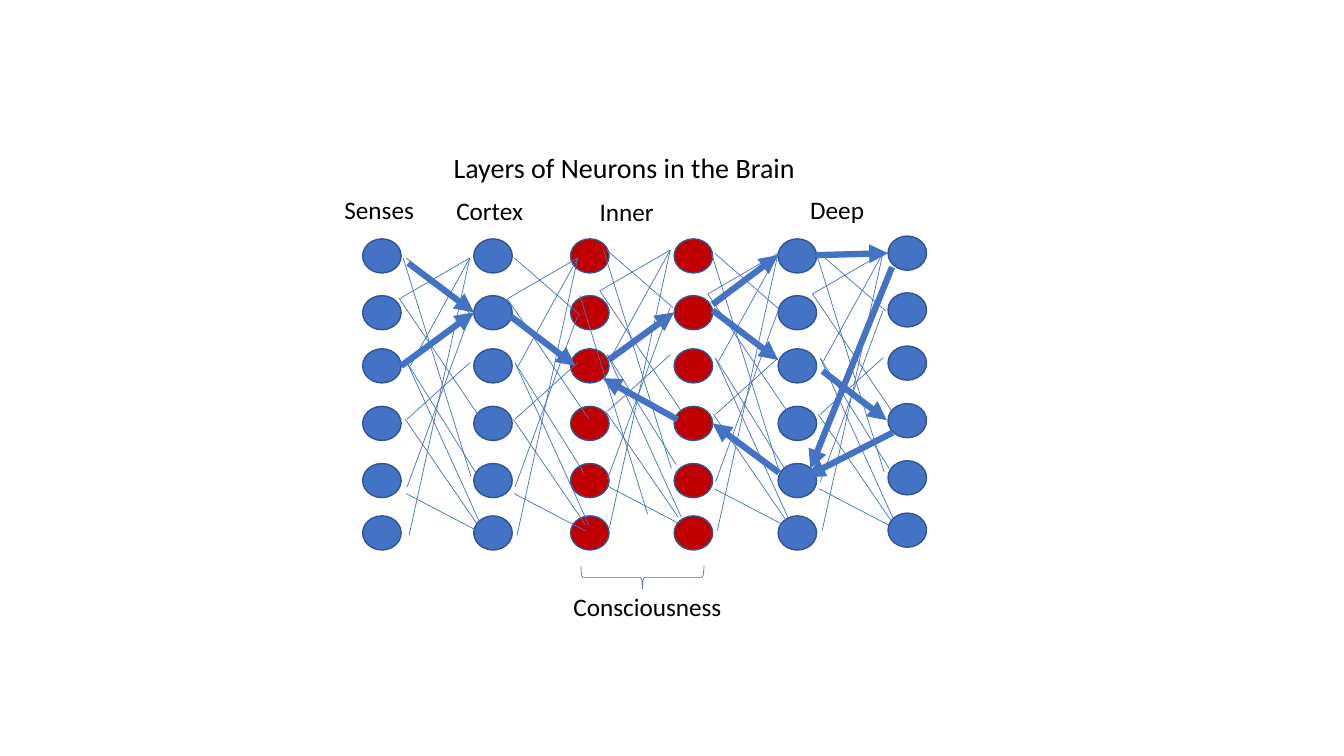
import dataclasses

import lxml.etree
import pptx
import pptx.dml.color
import pptx.enum.shapes
import pptx.enum.text
import pptx.oxml.ns
import pptx.util

Cm = pptx.util.Cm
Pt = pptx.util.Pt


@dataclasses.dataclass(frozen=True)
class Theme:
    font: str = "Calibri"
    blue: str = "4472C4"
    red: str = "C00000"
    outline: str = "325491"
    ink: str = "000000"
    title_size: float = 20
    label_size: float = 18
    thin: float = 0.5
    edge: float = 1
    thick: float = 4.5


THEME = Theme()

LABELS = [
    ("Senses", 8.43, 4.78, 2.41, THEME.label_size),
    ("Cortex", 11.25, 4.8, 2.41, THEME.label_size),
    ("Deep", 20.17, 4.78, 2.87, THEME.label_size),
    ("Inner", 14.86, 4.83, 3, THEME.label_size),
    ("Layers of Neurons in the Brain", 11.18, 3.68, 11, THEME.title_size),
    ("Consciousness", 14.2, 14.78, 5.33, THEME.label_size),
]

NEURON_WIDTH, NEURON_HEIGHT = 0.97, 0.86
ROWS = [6.02, 7.45, 8.79, 10.24, 11.68, 13]
LAYERS = [
    (9.14, 0, THEME.blue),
    (11.94, 0, THEME.blue),
    (14.38, 0, THEME.red),
    (16.99, 0, THEME.red),
    (19.61, 0, THEME.blue),
    (22.38, -0.07, THEME.blue),
]

FIRST_SYNAPSE = (0, 0, 1.71, 5.51)
SYNAPSES = [
    (-0.1, 1.02, 1.96, 4.06),
    (0.1, 2.64, 1.96, 6.73),
    (0.05, 4.06, 1.88, 6.73),
    (1.68, 1.45, 0.1, 5.77),
    (1.68, 0, 0.15, 6.99),
    (1.68, 2.64, 0.1, 4.06),
    (1.68, 0, -0.08, 1.02),
    (1.83, 5.41, 0.1, 2.64),
    (1.88, 6.88, 0.08, 5.94),
    (1.75, 1.45, 0.08, 0),
    (1.68, 0, 0.18, 2.72),
]
BACK_WEB = (20.57, 6.38, 0, 0)
FRONT_WEBS = [
    (10.16, 6.5, 0, 0),
    (12.88, 6.5, 1.73, 0.94),
    (15.21, 6.3, 0, 0),
    (17.93, 6.38, 0, 0),
]

SIGNALS = [
    (10.29, 6.63, 11.94, 7.87),
    (10.11, 9.22, 11.94, 7.87),
    (12.88, 7.98, 14.5, 9.22),
    (15.34, 9.07, 16.99, 7.87),
    (17.96, 7.82, 19.61, 9.07),
    (17.96, 7.67, 19.61, 6.43),
    (20.73, 9.35, 22.35, 10.59),
    (22.5, 10.9, 20.32, 12.01),
    (19.63, 11.91, 17.96, 10.67),
    (20.57, 6.43, 22.38, 6.38),
    (22.48, 6.73, 20.42, 11.81),
    (17.07, 10.57, 15.19, 9.53),
]

BRACE = (15.9, 13, 0.58, 3.1)


def color(value):
    return pptx.dml.color.RGBColor.from_string(value)


def apply(target, values):
    for name, value in values.items():
        setattr(target, name, value)


def stroke(item, value, width):
    item.line.color.rgb = color(value)
    item.line.width = Pt(width)


def add_line(page, ends, width, arrow=False):
    connector = page.shapes.add_connector(
        pptx.enum.shapes.MSO_CONNECTOR.STRAIGHT, *map(Cm, ends))
    stroke(connector, THEME.blue, width)
    if arrow:
        lxml.etree.SubElement(
            connector.line._get_or_add_ln(),
            pptx.oxml.ns.qn("a:tailEnd"), type="triangle")
    lxml.etree.SubElement(
        connector._element.spPr, pptx.oxml.ns.qn("a:effectLst"))


def add_web(page, web):
    left, top, shift_x, shift_y = web
    x1, y1, x2, y2 = FIRST_SYNAPSE
    first = (x1 + shift_x, y1 + shift_y, x2 + shift_x, y2 + shift_y)
    for x1, y1, x2, y2 in [first] + SYNAPSES:
        add_line(page, (left + x1, top + y1, left + x2, top + y2), THEME.thin)


def add_neurons(page):
    for left, shift, fill in reversed(LAYERS):
        for top in ROWS:
            neuron = page.shapes.add_shape(
                pptx.enum.shapes.MSO_SHAPE.OVAL, Cm(left), Cm(top + shift),
                Cm(NEURON_WIDTH), Cm(NEURON_HEIGHT))
            neuron.shadow.inherit = False
            neuron.fill.solid()
            neuron.fill.fore_color.rgb = color(fill)
            stroke(neuron, THEME.outline, THEME.edge)


def add_label(page, text, left, top, width, size):
    height = 1.12 if size == THEME.title_size else 1.03
    box = page.shapes.add_textbox(Cm(left), Cm(top), Cm(width), Cm(height))
    apply(box.text_frame, {
        "word_wrap": True,
        "auto_size": pptx.enum.text.MSO_AUTO_SIZE.SHAPE_TO_FIT_TEXT,
    })
    span = box.text_frame.paragraphs[0].add_run()
    span.text = text
    apply(span.font, {"name": THEME.font, "size": Pt(size)})
    span.font.color.rgb = color(THEME.ink)


def add_brace(page):
    brace = page.shapes.add_shape(
        pptx.enum.shapes.MSO_SHAPE.RIGHT_BRACE, *map(Cm, BRACE))
    brace.rotation = 90
    brace.shadow.inherit = False
    brace.fill.background()
    stroke(brace, THEME.blue, THEME.thin)


def main():
    deck = pptx.Presentation()
    apply(deck, {"slide_width": Cm(33.87), "slide_height": Cm(19.05)})
    page = deck.slides.add_slide(deck.slide_layouts[6])
    add_web(page, BACK_WEB)
    add_neurons(page)
    for web in FRONT_WEBS:
        add_web(page, web)
    for ends in SIGNALS:
        add_line(page, ends, THEME.thick, arrow=True)
    for label in LABELS:
        add_label(page, *label)
    add_brace(page)
    deck.save("out.pptx")


if __name__ == "__main__":
    main()
